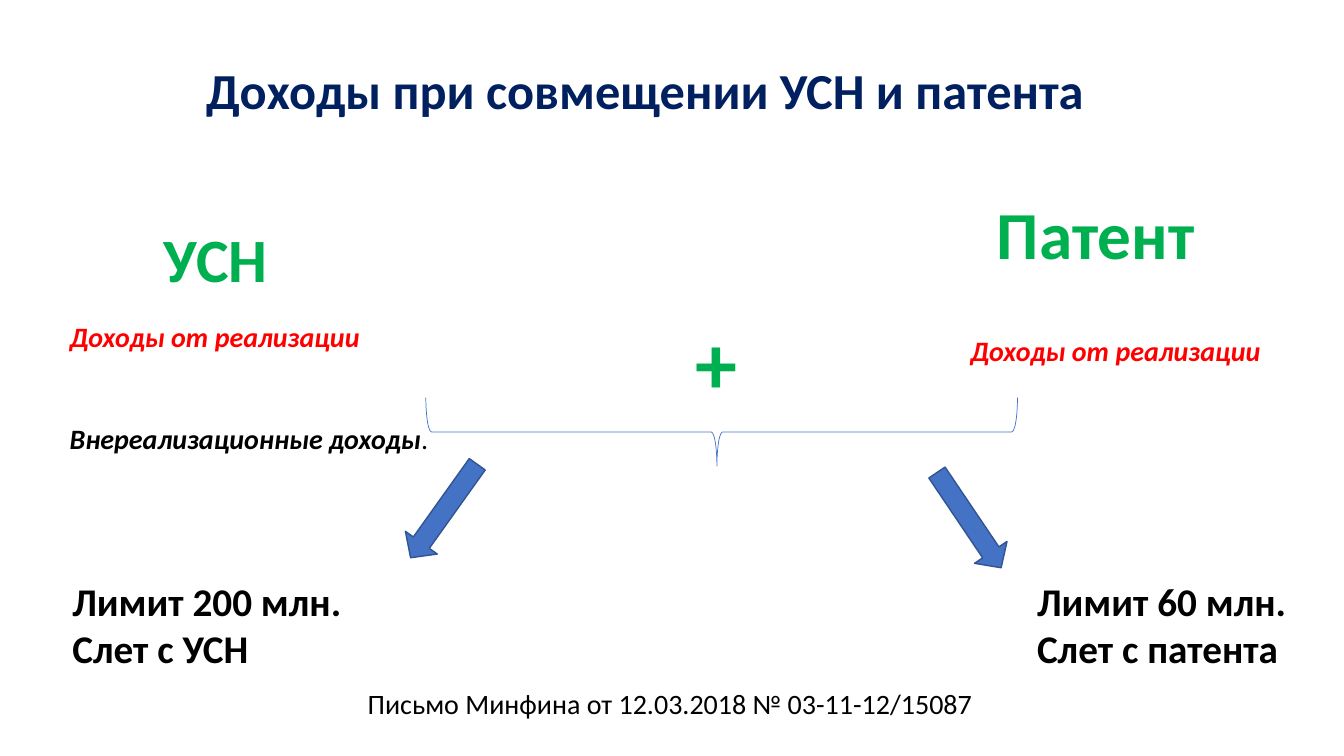
import pptx
import pptx.dml.color
import pptx.enum.shapes
import pptx.enum.text
import pptx.oxml
import pptx.oxml.ns
import pptx.util

Pt = pptx.util.Pt
RGBColor = pptx.dml.color.RGBColor
MSO_SHAPE = pptx.enum.shapes.MSO_SHAPE

THEME = {
    "font": "Calibri",
    "navy": RGBColor.from_string("002060"),
    "green": RGBColor.from_string("00B050"),
    "red": RGBColor.from_string("FF0000"),
    "black": RGBColor.from_string("000000"),
    "blue": RGBColor.from_string("4472C4"),
    "outline": RGBColor.from_string("325491"),
    "title": Pt(36),
    "usn": Pt(44),
    "patent": Pt(48),
    "plus": Pt(60),
    "limit": Pt(28),
    "text": Pt(20),
}


def place(shape, left, top, width, height):
    shape.left, shape.top = Pt(left), Pt(top)
    shape.width, shape.height = Pt(width), Pt(height)


def format_run(run, size, color, bold=True, italic=False):
    run.font.name = THEME["font"]
    run.font.size = THEME[size]
    run.font.color.rgb = THEME[color]
    run.font.bold = bold
    run.font.italic = italic


presentation = pptx.Presentation()
presentation.slide_width = Pt(960)
presentation.slide_height = Pt(540)
slide = presentation.slides.add_slide(presentation.slide_layouts[1])

title = slide.shapes.title
place(title, 140, 11.5, 785, 110)
title.text_frame.text = "Доходы при совмещении УСН и патента"
title.text_frame.vertical_anchor = pptx.enum.text.MSO_ANCHOR.MIDDLE
heading = title.text_frame.paragraphs[0]
heading.alignment = pptx.enum.text.PP_ALIGN.LEFT
heading.line_spacing = 0.9
format_run(heading.runs[0], "title", "navy")

income = slide.placeholders[1]
place(income, 42.5, 224.6, 480, 104.4)
income.text_frame.text = "Доходы от реализации\nВнереализационные доходы"
income.text_frame.auto_size = pptx.enum.text.MSO_AUTO_SIZE.NONE
for paragraph, color, gap in zip(income.text_frame.paragraphs, ("red", "black"), (0, 48.8)):
    properties = paragraph._p.get_or_add_pPr()
    properties.set("marL", "0")
    properties.set("indent", "0")
    properties.append(pptx.oxml.parse_xml(f"<a:buNone {pptx.oxml.ns.nsdecls('a')}/>"))
    paragraph.space_before = Pt(gap)
    format_run(paragraph.runs[0], "text", color, italic=True)
period = income.text_frame.paragraphs[1].add_run()
period.text = "."
format_run(period, "text", "black", bold=False)

labels = [
    ("УСН", (110, 154, 207, 60.5), "usn", "green", True, False),
    ("Лимит 200 млн.\nСлет с УСН", (44.6, 409, 283, 75), "limit", "black", True, False),
    ("Патент", (705, 134, 182, 65.5), "patent", "green", True, False),
    ("Доходы от реализации", (686, 234.7, 270, 55.4), "text", "red", True, True),
    ("Лимит 60 млн.\nСлет с патента", (733.7, 409, 225, 75), "limit", "black", True, False),
    ("+", (489.6, 218, 140, 80), "plus", "green", True, False),
    ("Письмо Минфина от 12.03.2018 № 03-11-12/15087",
     (255.6, 486.7, 449.3, 31.7), "text", "black", False, False),
]
for text, box, size, color, bold, italic in labels:
    label = slide.shapes.add_textbox(*map(Pt, box))
    label.text_frame.word_wrap = True
    label.text_frame.text = text
    for paragraph in label.text_frame.paragraphs:
        format_run(paragraph.runs[0], size, color, bold, italic)

brace = slide.shapes.add_shape(MSO_SHAPE.LEFT_BRACE, Pt(491), Pt(97.2), Pt(49), Pt(422.6))
brace.rotation = 270
brace.adjustments[0] = 0.083
brace.adjustments[1] = 0.492
brace.shadow.inherit = False
brace.fill.background()
brace.line.color.rgb = THEME["blue"]
brace.line.width = Pt(0.5)

for left, top, rotation in ((678.2, 330.5, 326), (303.1, 324, 35.5)):
    arrow = slide.shapes.add_shape(MSO_SHAPE.DOWN_ARROW, Pt(left), Pt(top), Pt(28), Pt(82))
    arrow.rotation = rotation
    arrow.adjustments[0] = 0.5
    arrow.adjustments[1] = 0.472
    arrow.shadow.inherit = False
    arrow.fill.solid()
    arrow.fill.fore_color.rgb = THEME["blue"]
    arrow.line.color.rgb = THEME["outline"]
    arrow.line.width = Pt(1)

presentation.save("out.pptx")
